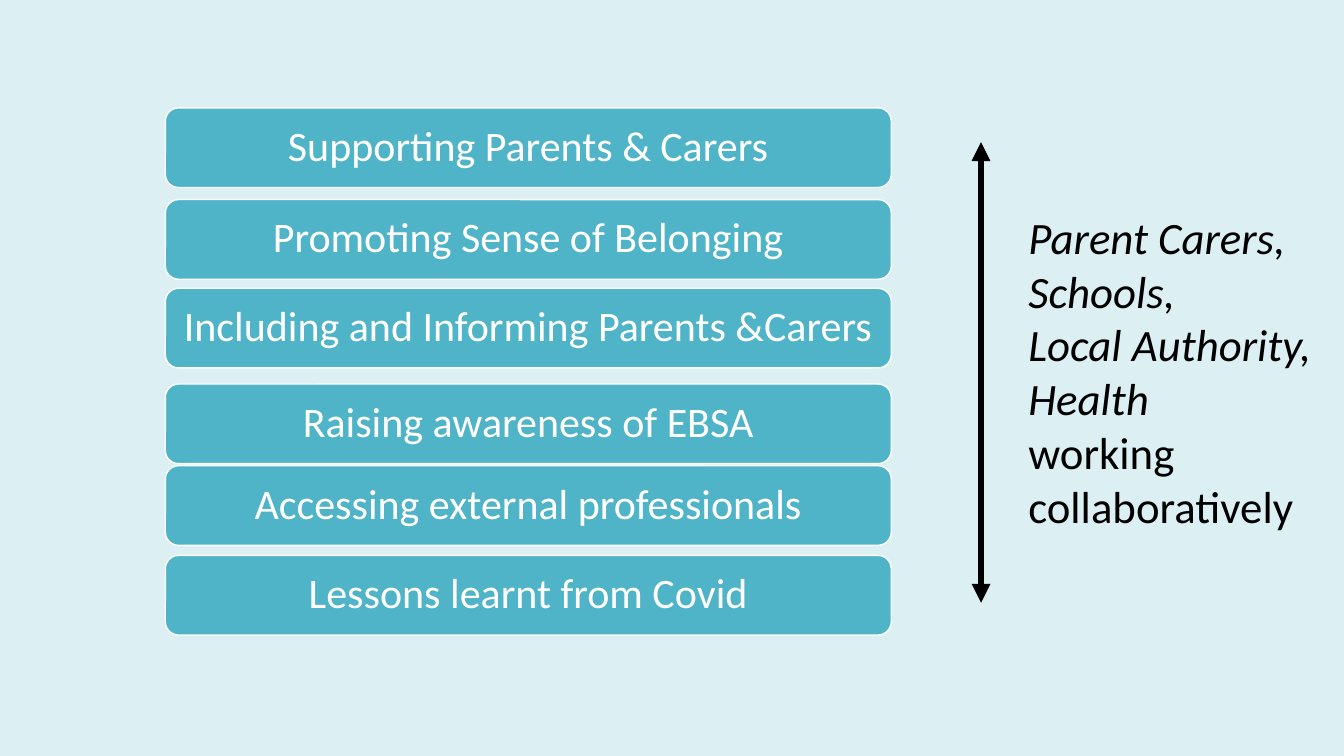
from lxml.etree import SubElement
from pptx import Presentation
from pptx.dml.color import RGBColor
from pptx.enum.shapes import MSO_CONNECTOR, MSO_SHAPE
from pptx.enum.text import MSO_ANCHOR, MSO_AUTO_SIZE, PP_ALIGN
from pptx.oxml.ns import qn
from pptx.util import Inches, Pt

PALE_BLUE = RGBColor(0xDC, 0xF0, 0xF4)
TEAL = RGBColor(0x50, 0xB4, 0xC8)
WHITE = RGBColor(0xFF, 0xFF, 0xFF)
BLACK = RGBColor(0x00, 0x00, 0x00)


def write(para, text, size, color, italic=False, align=PP_ALIGN.LEFT, spacing=1.0):
    para.alignment = align
    para.line_spacing = spacing
    span = para.add_run()
    span.text = text
    span.font.name = "Calibri"
    span.font.size = Pt(size)
    span.font.italic = italic
    span.font.color.rgb = color


deck = Presentation()
deck.slide_width = Inches(13.33)
deck.slide_height = Inches(7.5)
page = deck.slides.add_slide(deck.slide_layouts[6])
page.background.fill.solid()
page.background.fill.fore_color.rgb = PALE_BLUE

# Stack of themes
themes = [
    (1.07, "Supporting Parents & Carers"),
    (1.98, "Promoting Sense of Belonging"),
    (2.86, "Including and Informing Parents &Carers"),
    (3.81, "Raising awareness of EBSA"),
    (4.62, "Accessing external professionals"),
    (5.51, "Lessons learnt from Covid"),
]
for top, theme in themes:
    box = page.shapes.add_shape(
        MSO_SHAPE.ROUNDED_RECTANGLE, Inches(1.64), Inches(top), Inches(7.2), Inches(0.79))
    box.shadow.inherit = False
    box.fill.solid()
    box.fill.fore_color.rgb = TEAL
    box.line.color.rgb = WHITE
    box.line.width = Pt(1)
    frame = box.text_frame
    frame.word_wrap = True
    frame.vertical_anchor = MSO_ANCHOR.MIDDLE
    frame.margin_left = frame.margin_right = Inches(0.12)
    frame.margin_top = frame.margin_bottom = Inches(0.12)
    write(frame.paragraphs[0], theme, 30, WHITE, align=PP_ALIGN.CENTER, spacing=0.9)

# Double-headed arrow
arrow = page.shapes.add_connector(
    MSO_CONNECTOR.STRAIGHT, Inches(9.73), Inches(1.41), Inches(9.73), Inches(5.98))
arrow.line.color.rgb = BLACK
arrow.line.width = Pt(4.5)
for end in ("a:headEnd", "a:tailEnd"):
    SubElement(arrow.line._get_or_add_ln(), qn(end), type="triangle")
SubElement(arrow._element.spPr, qn("a:effectLst"))

# Partners working together
partners = page.shapes.add_textbox(Inches(10.1), Inches(2.03), Inches(3.12), Inches(3.33))
frame = partners.text_frame
frame.word_wrap = True
frame.auto_size = MSO_AUTO_SIZE.SHAPE_TO_FIT_TEXT
lines = [
    ("Parent Carers, Schools,", True),
    ("Local Authority, Health", True),
    ("working collaboratively", False),
]
for index, (text, italic) in enumerate(lines):
    para = frame.add_paragraph() if index else frame.paragraphs[0]
    write(para, text, 32, BLACK, italic=italic)

deck.save("out.pptx")
